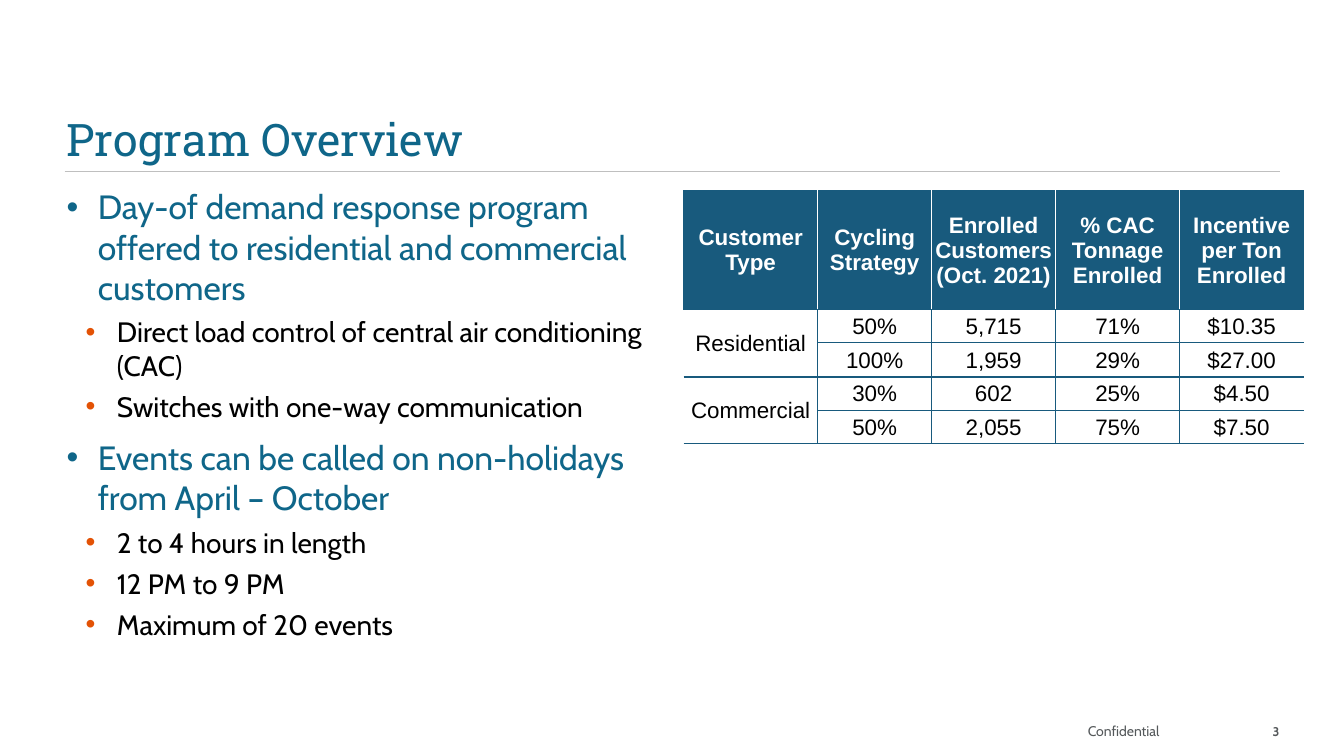
from lxml import etree
from pptx import Presentation
from pptx.dml.color import RGBColor
from pptx.enum import shapes, text
from pptx.oxml import ns
from pptx.util import Inches, Pt

TEAL, NAVY, ORANGE = "0F6689", "185A7D", "E35205"
BLACK, WHITE, SLATE, SILVER = "000000", "FFFFFF", "54585A", "BFBFBF"
BODY_FONT, TITLE_FONT, TABLE_FONT = "Cabin", "Roboto Slab", "Arial"

BULLETS = [
    (0, "Day-of demand response program offered to residential and commercial customers"),
    (1, "Direct load control of central air conditioning (CAC)"),
    (1, "Switches with one-way communication"),
    (0, "Events can be called on non-holidays from April – October"),
    (1, "2 to 4 hours in length"),
    (1, "12 PM to 9 PM"),
    (1, "Maximum of 20 events"),
]
ENROLLMENT = [
    ["Customer Type", "Cycling Strategy", "Enrolled Customers (Oct. 2021)",
     "% CAC Tonnage Enrolled", "Incentive per Ton Enrolled"],
    ["Residential", "50%", "5,715", "71%", "$10.35"],
    ["", "100%", "1,959", "29%", "$27.00"],
    ["Commercial", "30%", "602", "25%", "$4.50"],
    ["", "50%", "2,055", "75%", "$7.50"],
]
COLUMN_WIDTHS = [1.33, 1.13, 1.23, 1.23, 1.23]
ROW_HEIGHTS = [1.18, 0.33, 0.34, 0.33, 0.33]


def color(value):
    return RGBColor.from_string(value)


def add_element(parent, tag, **attributes):
    return etree.SubElement(parent, ns.qn(tag), attributes)


class SlideBuilder:
    def __init__(self, presentation):
        self.slide = presentation.slides.add_slide(presentation.slide_layouts[5])

    def style_font(self, paragraph, name, size, hex_color, bold=False):
        for run in paragraph.runs:
            font = run.font
            font.name, font.size, font.bold = name, Pt(size), bold
            font.color.rgb = color(hex_color)

    def set_frame(self, frame, anchor, left=0.0, right=0.0):
        frame.word_wrap = True
        frame.auto_size = text.MSO_AUTO_SIZE.NONE
        frame.vertical_anchor = anchor
        frame.margin_left, frame.margin_right = Inches(left), Inches(right)
        frame.margin_top = frame.margin_bottom = Inches(0.05)

    def text_box(self, left, top, width, height):
        return self.slide.shapes.add_textbox(
            Inches(left), Inches(top), Inches(width), Inches(height)).text_frame

    def title(self, words, left, top, width, height):
        shape = self.slide.shapes.title
        shape.left, shape.top = Inches(left), Inches(top)
        shape.width, shape.height = Inches(width), Inches(height)
        self.set_frame(shape.text_frame, text.MSO_ANCHOR.BOTTOM, right=1.5)
        shape.text_frame.text = words
        paragraph = shape.text_frame.paragraphs[0]
        paragraph.alignment = text.PP_ALIGN.LEFT
        paragraph.line_spacing = 0.9
        self.style_font(paragraph, TITLE_FONT, 32, TEAL)

    def rule(self, left, top, right):
        line = self.slide.shapes.add_connector(
            shapes.MSO_CONNECTOR.STRAIGHT,
            Inches(left), Inches(top), Inches(right), Inches(top))
        line.line.color.rgb = color(SILVER)
        line.line.width = Pt(1)
        add_element(line._element.spPr, "a:effectLst")

    def bullets(self, items, left, top, width, height):
        frame = self.text_box(left, top, width, height)
        self.set_frame(frame, text.MSO_ANCHOR.TOP, right=0.1)
        frame.text = "\n".join(words for _, words in items)
        for index, (paragraph, (level, _)) in enumerate(zip(frame.paragraphs, items)):
            indent, size, ink, dot, space = (
                (0.5, 20, BLACK, ORANGE, 5.3) if level else (0.31, 24, TEAL, TEAL, 10))
            paragraph.level = level
            paragraph.space_before = Pt(space if index else 0)
            properties = paragraph._p.get_or_add_pPr()
            properties.set("marL", str(Inches(indent)))
            properties.set("indent", str(Inches(-0.31)))
            add_element(add_element(properties, "a:buClr"), "a:srgbClr", val=dot)
            add_element(properties, "a:buFont", typeface="Arial")
            add_element(properties, "a:buChar", char="•")
            self.style_font(paragraph, BODY_FONT, size, ink)

    def footer(self, words, left, top, width, height, size, bold, alignment):
        frame = self.text_box(left, top, width, height)
        self.set_frame(frame, text.MSO_ANCHOR.BOTTOM, left=0.1)
        frame.text = words
        frame.paragraphs[0].alignment = alignment
        self.style_font(frame.paragraphs[0], BODY_FONT, size, SLATE, bold)

    def borders(self, cell, edges):
        """Draw the left, right, top and bottom edges; None leaves an edge bare."""
        properties = cell._tc.get_or_add_tcPr()
        for side, edge in zip("LRTB", edges):
            hex_color, width = edge or (None, 0)
            line = add_element(properties, f"a:ln{side}", w=str(Pt(width)))
            if edge:
                fill = add_element(line, "a:solidFill")
                add_element(fill, "a:srgbClr", val=hex_color)
            else:
                add_element(line, "a:noFill")

    def cell(self, cell, words, header):
        cell.margin_left = cell.margin_right = cell.margin_top = Inches(0.01)
        cell.margin_bottom = 0
        cell.vertical_anchor = text.MSO_ANCHOR.MIDDLE
        if header:
            cell.fill.solid()
            cell.fill.fore_color.rgb = color(NAVY)
        else:
            cell.fill.background()
        cell.text_frame.text = words
        paragraph = cell.text_frame.paragraphs[0]
        paragraph.alignment = text.PP_ALIGN.CENTER
        self.style_font(paragraph, TABLE_FONT, 16, WHITE if header else BLACK, header)

    def table(self, rows, left, top):
        table = self.slide.shapes.add_table(
            len(rows), len(rows[0]), Inches(left), Inches(top),
            Inches(sum(COLUMN_WIDTHS)), Inches(sum(ROW_HEIGHTS))).table
        table.horz_banding = False
        for column, width in zip(table.columns, COLUMN_WIDTHS):
            column.width = Inches(width)
        for row, height in zip(table.rows, ROW_HEIGHTS):
            row.height = Inches(height)
        thin, group_edge = (NAVY, 0.5), (NAVY, 1)
        last = len(COLUMN_WIDTHS) - 1
        for r, row in enumerate(rows):
            header = r == 0
            inner = (WHITE, 0.5) if header else thin
            outer = thin if header else None
            for c, words in enumerate(row):
                cell = table.cell(r, c)
                self.borders(cell, (
                    inner if c else outer,
                    inner if c < last else outer,
                    group_edge if r == 3 else thin,
                    group_edge if r == 2 else thin))
                self.cell(cell, words, header)
        for r in (1, 3):
            table.cell(r, 0).merge(table.cell(r + 1, 0))


def main():
    presentation = Presentation()
    presentation.slide_width, presentation.slide_height = Inches(13.33), Inches(7.5)
    builder = SlideBuilder(presentation)
    builder.footer("Confidential", 10.69, 6.98, 1.29, 0.4, 10, False, text.PP_ALIGN.LEFT)
    builder.rule(0.64, 1.7, 12.7)
    builder.title("Program Overview", 0.66, 0.7, 12.01, 1)
    builder.bullets(BULLETS, 0.66, 1.8, 6.01, 4.86)
    builder.footer("3", 12.12, 6.98, 0.57, 0.4, 9, True, text.PP_ALIGN.RIGHT)
    builder.table(ENROLLMENT, 6.78, 1.89)
    presentation.save("out.pptx")


if __name__ == "__main__":
    main()
